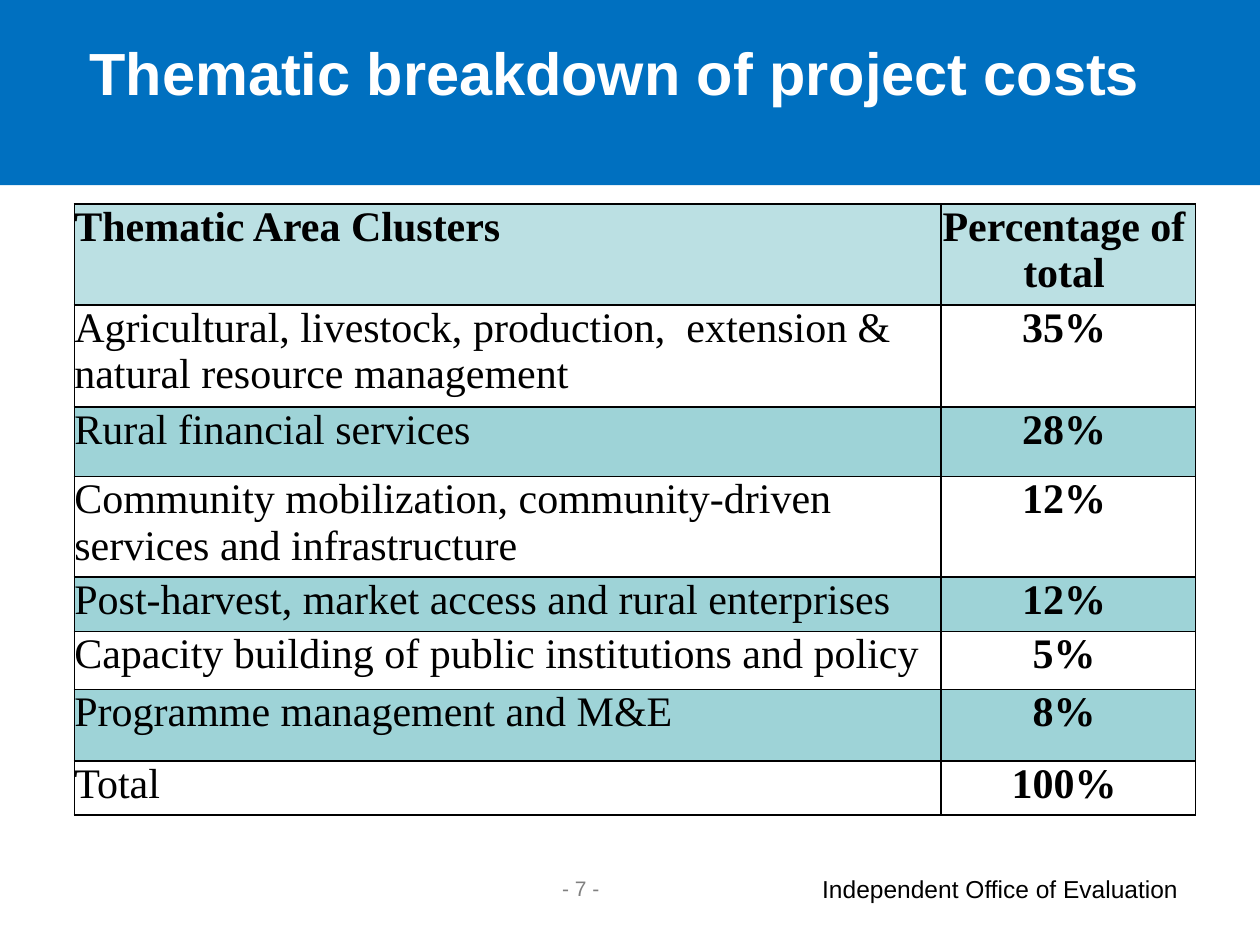
"""Build the slide on the thematic breakdown of project costs."""
from lxml import etree
from pptx import Presentation
from pptx import util as u
from pptx.dml.color import RGBColor
from pptx.enum import shapes, text
from pptx.oxml.ns import qn

TITLE = "Thematic breakdown of project costs"
FOOTER = "Independent Office of Evaluation"
PAGE = "- 7 -"
HEADER = ("Thematic Area Clusters", "Percentage of total")
ROWS = [
    ("Agricultural, livestock, production,  extension & natural resource management", "35%"),
    ("Rural financial services", "28%"),
    ("Community mobilization, community-driven services and infrastructure", "12%"),
    ("Post-harvest, market access and rural enterprises", "12%"),
    ("Capacity building of public institutions and policy", "5%"),
    ("Programme management and M&E", "8%"),
    ("Total", "100%"),
]
COL_WIDTHS = (6.88, 2.02)
ROW_HEIGHTS = (0.74, 0.81, 0.55, 0.77, 0.43, 0.46, 0.57, 0.43)

THEME = {
    "sans": "Arial", "serif": "Times New Roman",
    "band": "0070C0", "header": "BBE0E3", "stripe": "9ED3D7",
    "white": "FFFFFF", "black": "000000", "grey": "808080",
    "title_size": 34, "table_size": 24, "footer_size": 14, "page_size": 12,
}
LEFT, CENTER, RIGHT = text.PP_ALIGN.LEFT, text.PP_ALIGN.CENTER, text.PP_ALIGN.RIGHT


def color(name):
    return RGBColor.from_string(THEME[name])


def write(tf, words, size, ink, align, font="sans", bold=False):
    p = tf.paragraphs[0]
    p.alignment = align
    r = p.add_run()
    r.text = words
    r.font.name = THEME[font]
    r.font.size = u.Pt(THEME[size])
    r.font.bold = bold
    r.font.color.rgb = color(ink)


def add_label(slide, box, words, size, ink, align, bold=False, inset=None, wrap=True):
    tf = slide.shapes.add_textbox(*map(u.Inches, box)).text_frame
    tf.word_wrap = wrap
    if inset is not None:
        tf.margin_left = tf.margin_top = tf.margin_right = tf.margin_bottom = u.Inches(inset)
    write(tf, words, size, ink, align, bold=bold)


def set_borders(cell):
    pr = cell._tc.get_or_add_tcPr()
    for i, side in enumerate(("a:lnL", "a:lnR", "a:lnT", "a:lnB")):
        ln = etree.Element(qn(side), w=str(u.Pt(1)))
        fill = etree.SubElement(ln, qn("a:solidFill"))
        etree.SubElement(fill, qn("a:srgbClr"), val=THEME["black"])
        pr.insert(i, ln)


def add_cost_table(slide):
    data = [HEADER] + ROWS
    box = map(u.Inches, (0.59, 1.62, sum(COL_WIDTHS), sum(ROW_HEIGHTS)))
    table = slide.shapes.add_table(len(data), len(HEADER), *box).table
    for col, width in zip(table.columns, COL_WIDTHS):
        col.width = u.Inches(width)
    for i, (row, height) in enumerate(zip(data, ROW_HEIGHTS)):
        table.rows[i].height = u.Inches(height)
        fill = "header" if i == 0 else "white" if i % 2 else "stripe"
        for j, words in enumerate(row):
            cell = table.cell(i, j)
            cell.margin_left = cell.margin_top = cell.margin_bottom = 0
            cell.margin_right = u.Inches(0.07)
            cell.fill.solid()
            cell.fill.fore_color.rgb = color(fill)
            set_borders(cell)
            write(cell.text_frame, words, "table_size", "black",
                  CENTER if j else LEFT, "serif", bold=i == 0 or j == 1)


def main():
    prs = Presentation()
    prs.slide_width, prs.slide_height = u.Inches(10), u.Inches(7.5)
    s = prs.slides.add_slide(prs.slide_layouts[6])
    band = s.shapes.add_shape(shapes.MSO_SHAPE.RECTANGLE, 0, 0, prs.slide_width, u.Inches(1.47))
    band.shadow.inherit = False
    band.fill.solid()
    band.fill.fore_color.rgb = color("band")
    band.line.fill.background()
    add_label(s, (6.41, 6.89, 3.04, 0.34), FOOTER, "footer_size", "black", RIGHT, wrap=False)
    add_label(s, (3.19, 6.9, 2.84, 0.39), PAGE, "page_size", "grey", CENTER)
    add_label(s, (0.35, 0.29, 9.06, 0.87), TITLE, "title_size", "white", CENTER,
              bold=True, inset=0)
    add_cost_table(s)
    prs.save("out.pptx")


if __name__ == "__main__":
    main()
